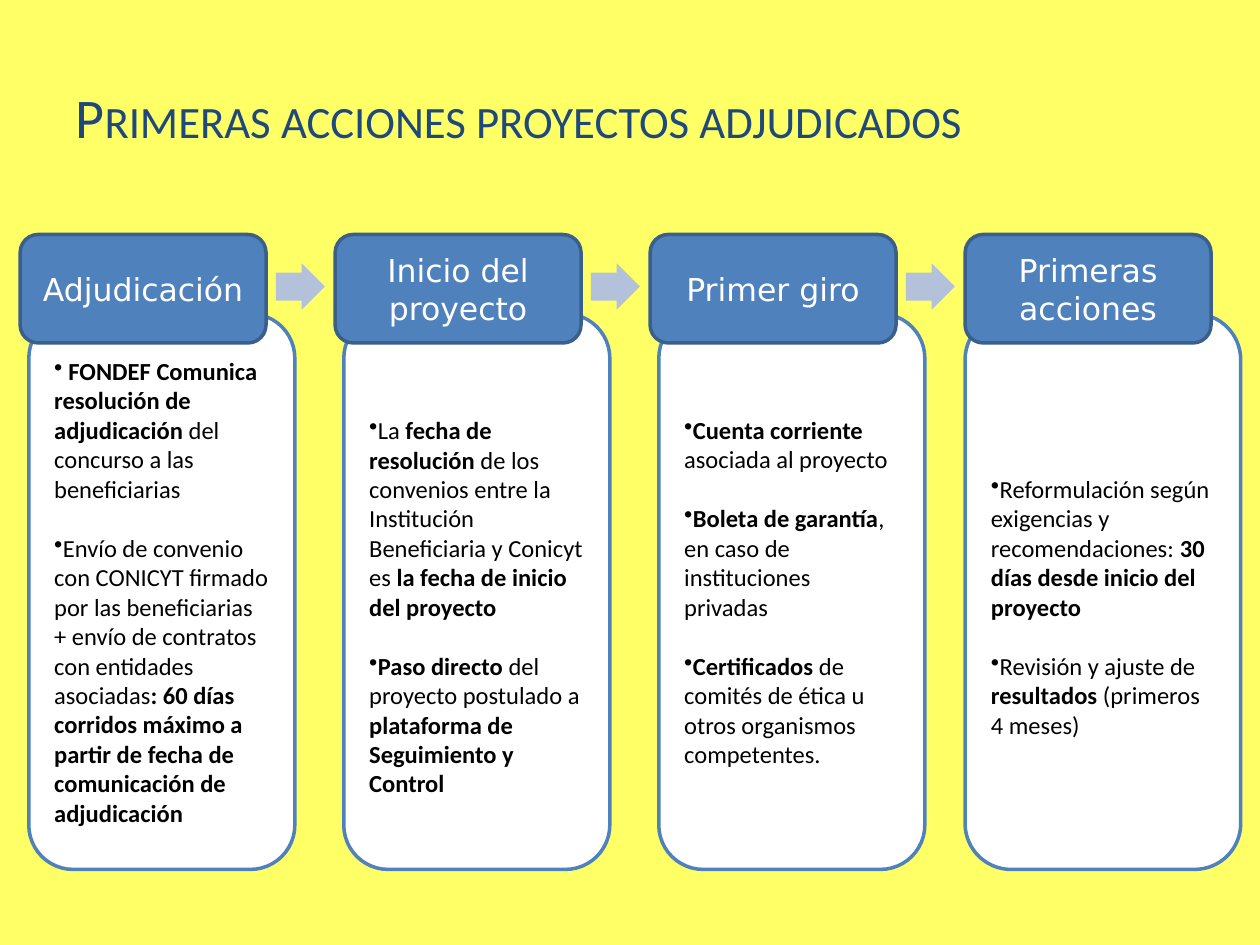
import pptx
import pptx.dml.color
import pptx.enum.shapes
import pptx.enum.text
import pptx.oxml
import pptx.oxml.ns
import pptx.util

Pt = pptx.util.Pt
RGBColor = pptx.dml.color.RGBColor
Shape = pptx.enum.shapes.MSO_SHAPE
Align = pptx.enum.text.PP_ALIGN
Anchor = pptx.enum.text.MSO_ANCHOR

YELLOW = RGBColor(0xFF, 0xFF, 0x66)
NAVY = RGBColor(0x1F, 0x49, 0x7D)
BLUE = RGBColor(0x4F, 0x81, 0xBD)
DARK_BLUE = RGBColor(0x3A, 0x5F, 0x8C)
PALE_BLUE = RGBColor(0xB3, 0xC1, 0xDB)
WHITE = RGBColor(0xFF, 0xFF, 0xFF)
BLACK = RGBColor(0, 0, 0)

TITLE = "Primeras acciones proyectos adjudicados"
STAGES = [
    {"name": "Adjudicación", "lines_above": 0, "items": [
        [(" FONDEF Comunica resolución de adjudicación ", True),
         ("del concurso a las beneficiarias", False)],
        [("Envío de convenio con CONICYT firmado por las beneficiarias "
          "+ envío de contratos con entidades asociadas", False),
         (": 60 días corridos máximo a partir de fecha de comunicación de adjudicación", True)],
    ]},
    {"name": "Inicio del proyecto", "lines_above": 1, "items": [
        [("La ", False), ("fecha de resolución ", True),
         ("de los convenios entre la Institución Beneficiaria y Conicyt es ", False),
         ("la fecha de inicio del proyecto", True)],
        [("Paso directo ", True), ("del proyecto postulado a ", False),
         ("plataforma de Seguimiento y Control", True)],
    ]},
    {"name": "Primer giro", "lines_above": 0, "items": [
        [("Cuenta corriente ", True), ("asociada al proyecto", False)],
        [("Boleta de garantía", True), (", en caso de instituciones privadas", False)],
        [("Certificados", True),
         (" de comités de ética u otros organismos competentes.", False)],
    ]},
    {"name": "Primeras acciones", "lines_above": 1, "items": [
        [("Reformulación según exigencias y recomendaciones: ", False),
         ("30 días desde inicio del proyecto", True)],
        [("Revisión y ajuste de ", False), ("resultados", True),
         (" (primeros 4 meses)", False)],
    ]},
]

TITLE_FORMAT = {"name": "Calibri", "size": Pt(32), "bold": False}
HEADER_FORMAT = {"name": "DejaVu Sans", "size": Pt(18), "bold": False}
ITEM_FORMAT = {"name": "Calibri", "size": Pt(14)}

PITCH = 180
HEADER_LEFT, HEADER_TOP, HEADER_WIDTH, HEADER_HEIGHT = 11.5, 134, 140.5, 62
CARD_LEFT, CARD_TOP, CARD_WIDTH, CARD_HEIGHT = 16.5, 179.3, 152, 317.5
LAST_CARD_LEFT, LAST_CARD_WIDTH = 551.5, 157.5
ARROW_LEFT, ARROW_TOP, ARROW_WIDTH, ARROW_HEIGHT = 157.7, 150.5, 28, 26.6
LINE_HEIGHT = 17
INSET = 3.6


def format_font(font, values, color):
    for key, value in values.items():
        setattr(font, key, value)
    font.color.rgb = color


def add_box(page, kind, bounds, fill, line=None):
    box = page.shapes.add_shape(kind, *[Pt(length) for length in bounds])
    box.shadow.inherit = False
    box.fill.solid()
    box.fill.fore_color.rgb = fill
    if line is None:
        box.line.fill.background()
    else:
        box.line.color.rgb = line
        box.line.width = Pt(2)
    box.text_frame.word_wrap = True
    box.text_frame.vertical_anchor = Anchor.MIDDLE
    return box


def add_bullet(para):
    properties = para._p.get_or_add_pPr()
    properties.set("marL", "0")
    properties.set("indent", "0")
    bullet = pptx.oxml.parse_xml(
        f'<a:buChar {pptx.oxml.ns.nsdecls("a")} char="•"/>')
    properties.append(bullet)


def add_card(page, column, stage):
    left, width = CARD_LEFT + column * PITCH, CARD_WIDTH
    if column == len(STAGES) - 1:
        left, width = LAST_CARD_LEFT, LAST_CARD_WIDTH
    card = add_box(page, Shape.ROUNDED_RECTANGLE,
                   (left, CARD_TOP, width, CARD_HEIGHT), WHITE, BLUE)
    frame = card.text_frame
    frame.margin_top = Pt(INSET + stage["lines_above"] * LINE_HEIGHT)
    for number, item in enumerate(stage["items"]):
        para = frame.add_paragraph() if number else frame.paragraphs[0]
        add_bullet(para)
        para.alignment = Align.LEFT
        if number:
            para.space_before = Pt(LINE_HEIGHT)
        for text, bold in item:
            span = para.add_run()
            span.text = text
            format_font(span.font, {**ITEM_FORMAT, "bold": bold}, BLACK)


def add_header(page, column, stage):
    header = add_box(page, Shape.ROUNDED_RECTANGLE,
                     (HEADER_LEFT + column * PITCH, HEADER_TOP, HEADER_WIDTH, HEADER_HEIGHT),
                     BLUE, DARK_BLUE)
    para = header.text_frame.paragraphs[0]
    para.alignment = Align.CENTER
    span = para.add_run()
    span.text = stage["name"]
    format_font(span.font, HEADER_FORMAT, WHITE)


def add_arrow(page, column):
    arrow = add_box(page, Shape.RIGHT_ARROW,
                    (ARROW_LEFT + column * PITCH, ARROW_TOP, ARROW_WIDTH, ARROW_HEIGHT),
                    PALE_BLUE)
    arrow.adjustments[0] = 0.6
    arrow.adjustments[1] = 0.5


def add_title(page):
    title = page.shapes.title
    bounds = {"left": 36, "top": 21.6, "width": 562.3, "height": 90}
    for key, value in bounds.items():
        setattr(title, key, Pt(value))
    title.text_frame.vertical_anchor = Anchor.MIDDLE
    para = title.text_frame.paragraphs[0]
    para.alignment = Align.LEFT
    span = para.add_run()
    span.text = TITLE
    format_font(span.font, TITLE_FORMAT, NAVY)
    span._r.get_or_add_rPr().set("cap", "small")


def main():
    deck = pptx.Presentation()
    deck.slide_width, deck.slide_height = Pt(720), Pt(540)
    page = deck.slides.add_slide(deck.slide_layouts.get_by_name("Title Only"))
    page.background.fill.solid()
    page.background.fill.fore_color.rgb = YELLOW
    add_title(page)
    for add_part in (add_card, add_header):
        for column, stage in enumerate(STAGES):
            add_part(page, column, stage)
    for column in range(len(STAGES) - 1):
        add_arrow(page, column)
    deck.save("out.pptx")


if __name__ == "__main__":
    main()
